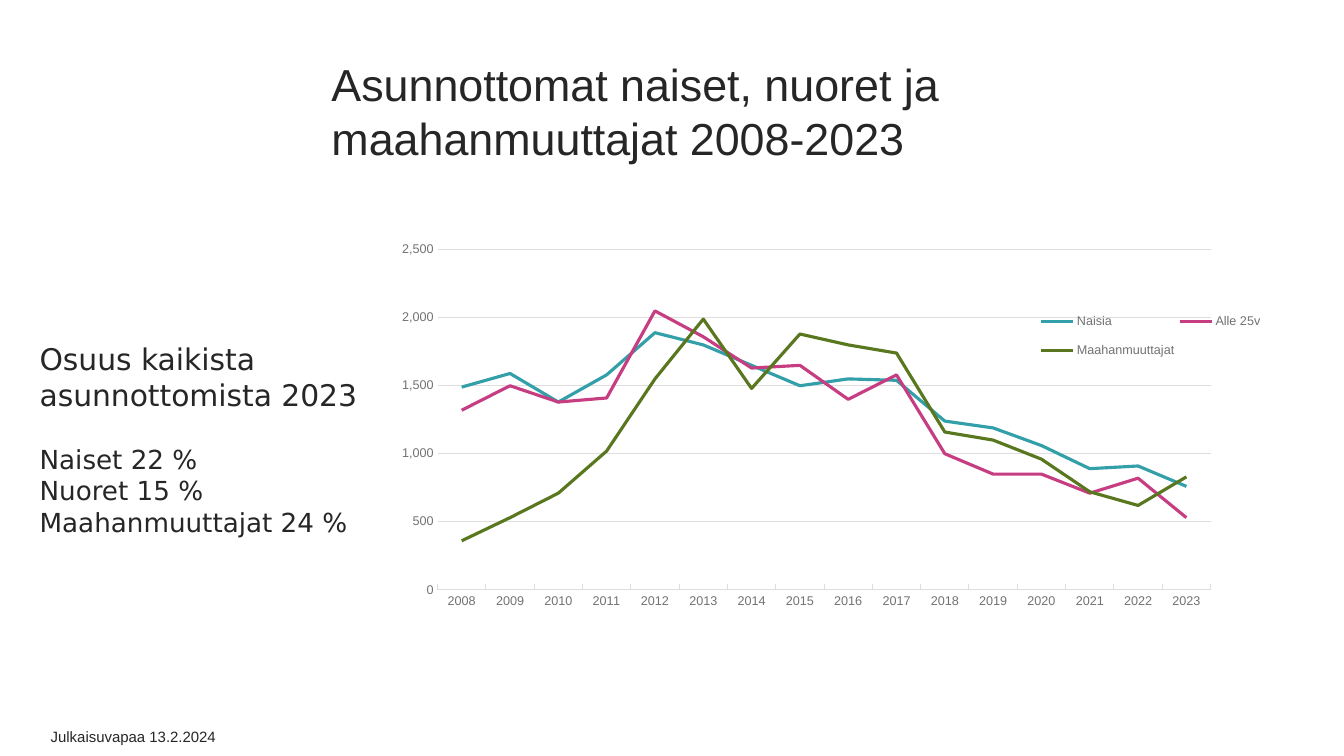
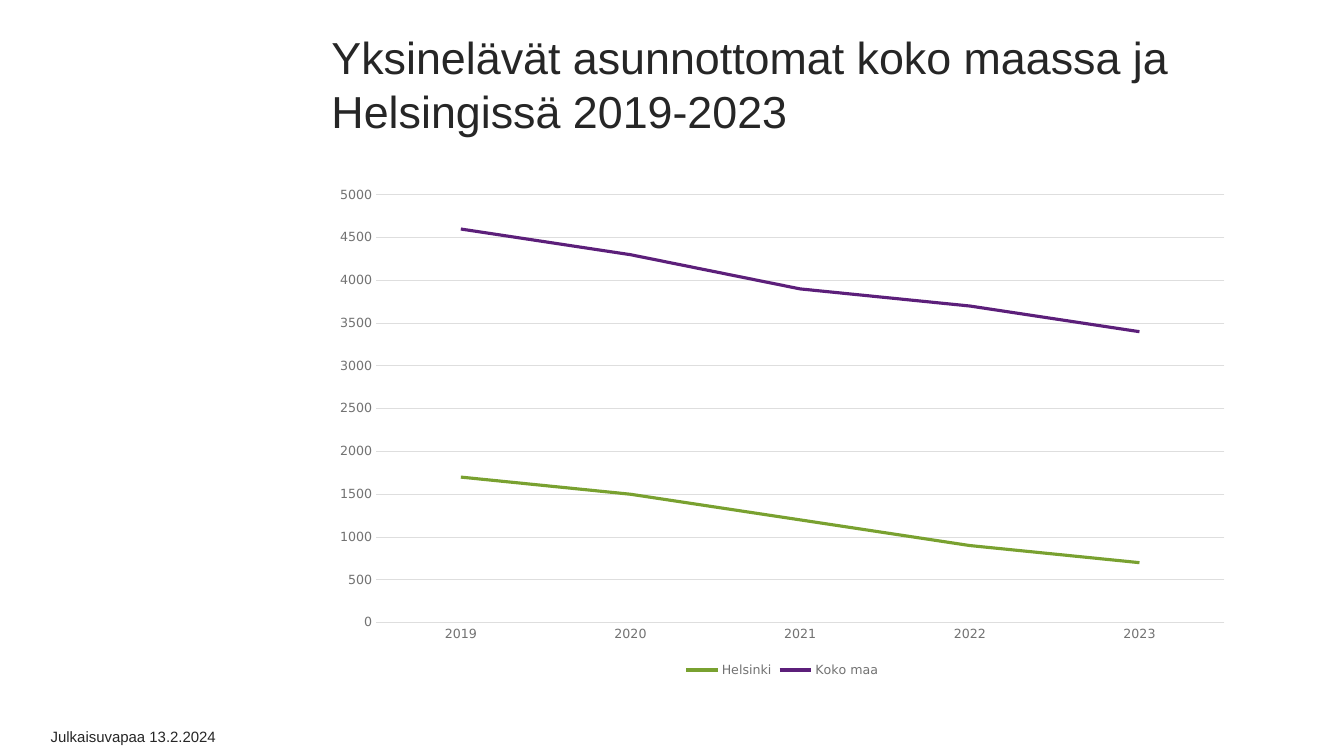
import pptx
import pptx.chart.data
import pptx.dml.color
import pptx.enum.chart
import pptx.enum.text
import pptx.util
from pptx.oxml import parse_xml

Pt = pptx.util.Pt
Tick = pptx.enum.chart.XL_TICK_MARK
Legend = pptx.enum.chart.XL_LEGEND_POSITION
Anchor = pptx.enum.text.MSO_ANCHOR

TEXT, MUTED, GRID = "262626", "727272", "DEDEDE"
SANS, WIDE = "Arial", "DejaVu Sans"
TITLE_BOX = (229.7, 61.2, 658, 36)
FOOTER_BOX = (26.6, 514.8, 168, 24)
CHART_NS = "http://schemas.openxmlformats.org/drawingml/2006/chart"


def rgb(value):
    return pptx.dml.color.RGBColor.from_string(value)


def style_font(font, size, name, color=TEXT):
    font.size = Pt(size)
    font.name = name
    font.color.rgb = rgb(color)


def style_line(line, color, width):
    line.color.rgb = rgb(color)
    line.width = Pt(width)


def add_text(slide, box, items, font, anchor=Anchor.TOP, inset=(9.6, 4.8)):
    tf = slide.shapes.add_textbox(*map(Pt, box)).text_frame
    tf.word_wrap = True
    tf.vertical_anchor = anchor
    tf.margin_left = tf.margin_right = Pt(inset[0])
    tf.margin_top = tf.margin_bottom = Pt(inset[1])
    for i, (text, size, before) in enumerate(items):
        p = tf.paragraphs[0] if i == 0 else tf.add_paragraph()
        if before:
            p.space_before = Pt(before)
        r = p.add_run()
        r.text = text
        style_font(r.font, size, font)
    return tf


def add_frame(prs, title, lift=0):
    slide = prs.slides.add_slide(prs.slide_layouts[6])
    left, top, width, height = TITLE_BOX
    add_text(slide, (left, top - lift, width, height), [(title, 32, 0)],
             SANS, Anchor.MIDDLE, (7.2, 3.6))
    tf = add_text(slide, FOOTER_BOX, [("Julkaisuvapaa 13.2.2024", 10.7, 0)], SANS)
    tf.paragraphs[0].space_after = Pt(8)
    return slide


def layout_xml(x, y, w, h, inner=False):
    target = '<c:layoutTarget val="inner"/>' if inner else ""
    return parse_xml(
        f'<c:layout xmlns:c="{CHART_NS}"><c:manualLayout>{target}'
        '<c:xMode val="edge"/><c:yMode val="edge"/>'
        f'<c:x val="{x}"/><c:y val="{y}"/><c:w val="{w}"/><c:h val="{h}"/>'
        '</c:manualLayout></c:layout>')


def set_layout(parent, layout, index):
    for old in parent.findall(f"{{{CHART_NS}}}layout"):
        parent.remove(old)
    parent.insert(index, layout)


def add_line_chart(slide, box, years, series, font, top, number_format, legend):
    data = pptx.chart.data.CategoryChartData()
    data.categories = [str(year) for year in years]
    for name, _, values in series:
        data.add_series(name, values)
    chart = slide.shapes.add_chart(
        pptx.enum.chart.XL_CHART_TYPE.LINE, *map(Pt, box), data).chart
    chart.has_title = False
    style_font(chart.font, 10, font)

    plot = chart.plots[0]
    plot.vary_by_categories = False
    for ser, (_, color, _) in zip(plot.series, series):
        ser.smooth = False
        ser.marker.style = pptx.enum.chart.XL_MARKER_STYLE.NONE
        style_line(ser.format.line, color, 2.25)

    cat, val = chart.category_axis, chart.value_axis
    for axis in (cat, val):
        axis.major_tick_mark = axis.minor_tick_mark = Tick.NONE
        style_font(axis.tick_labels.font, 9, font, MUTED)
    cat.has_major_gridlines = False
    style_line(cat.format.line, GRID, 0.75)
    val.format.line.fill.background()
    val.has_major_gridlines = True
    style_line(val.major_gridlines.format.line, GRID, 0.75)
    val.minimum_scale, val.maximum_scale, val.major_unit = 0, top, 500
    val.tick_labels.number_format = number_format
    val.tick_labels.number_format_is_linked = False

    chart.has_legend = True
    chart.legend.position = legend
    chart.legend.include_in_layout = False
    style_font(chart.legend.font, 9, font, MUTED)
    return chart


def build_groups(prs):
    slide = add_frame(prs, "Asunnottomat naiset, nuoret ja maahanmuuttajat 2008-2023")
    series = [
        ("Naisia", "329FA9", (1490, 1590, 1380, 1580, 1890, 1800, 1650, 1500,
                              1550, 1540, 1240, 1190, 1060, 890, 910, 760)),
        ("Alle 25v", "C73D82", (1320, 1500, 1380, 1410, 2050, 1860, 1630, 1650,
                                1400, 1580, 1000, 850, 850, 710, 820, 530)),
        ("Maahanmuuttajat", "59771E", (360, 530, 710, 1020, 1550, 1990, 1480, 1880,
                                       1800, 1740, 1160, 1100, 960, 720, 620, 830)),
    ]
    chart = add_line_chart(slide, (253.4, 163.4, 657.4, 300), range(2008, 2024),
                           series, SANS, 2500, "#,##0", Legend.RIGHT)
    chart.category_axis.major_tick_mark = Tick.INSIDE
    plot_area = chart.plots[0]._element.getparent()
    set_layout(plot_area, layout_xml(0.09, 0.05, 0.84, 0.81, True), 0)
    set_layout(chart.legend._element, layout_xml(0.74, 0.17, 0.25, 0.17), 1)
    for cross in plot_area.iter(f"{{{CHART_NS}}}crossBetween"):
        cross.set("val", "midCat")
    add_text(slide, (18.7, 164.9, 249, 297.4), [
        ("Osuus kaikista asunnottomista 2023", 21.3, 0),
        ("Naiset 22 %", 18.7, 22),
        ("Nuoret 15 %", 18.7, 0),
        ("Maahanmuuttajat 24 %", 18.7, 0),
    ], WIDE, Anchor.MIDDLE)


def build_regions(prs):
    slide = add_frame(prs, "Yksinelävät asunnottomat koko maassa ja Helsingissä 2019-2023", 19.4)
    series = [
        ("Helsinki", "79A130", (1700, 1500, 1200, 900, 700)),
        ("Koko maa", "5C1F7A", (4600, 4300, 3900, 3700, 3400)),
    ]
    add_line_chart(slide, (229.7, 126.7, 658, 360), range(2019, 2024),
                   series, WIDE, 5000, "General", Legend.BOTTOM)


def main():
    prs = pptx.Presentation()
    prs.slide_width, prs.slide_height = Pt(960), Pt(540)
    build_groups(prs)
    build_regions(prs)
    prs.save("out.pptx")


if __name__ == "__main__":
    main()
